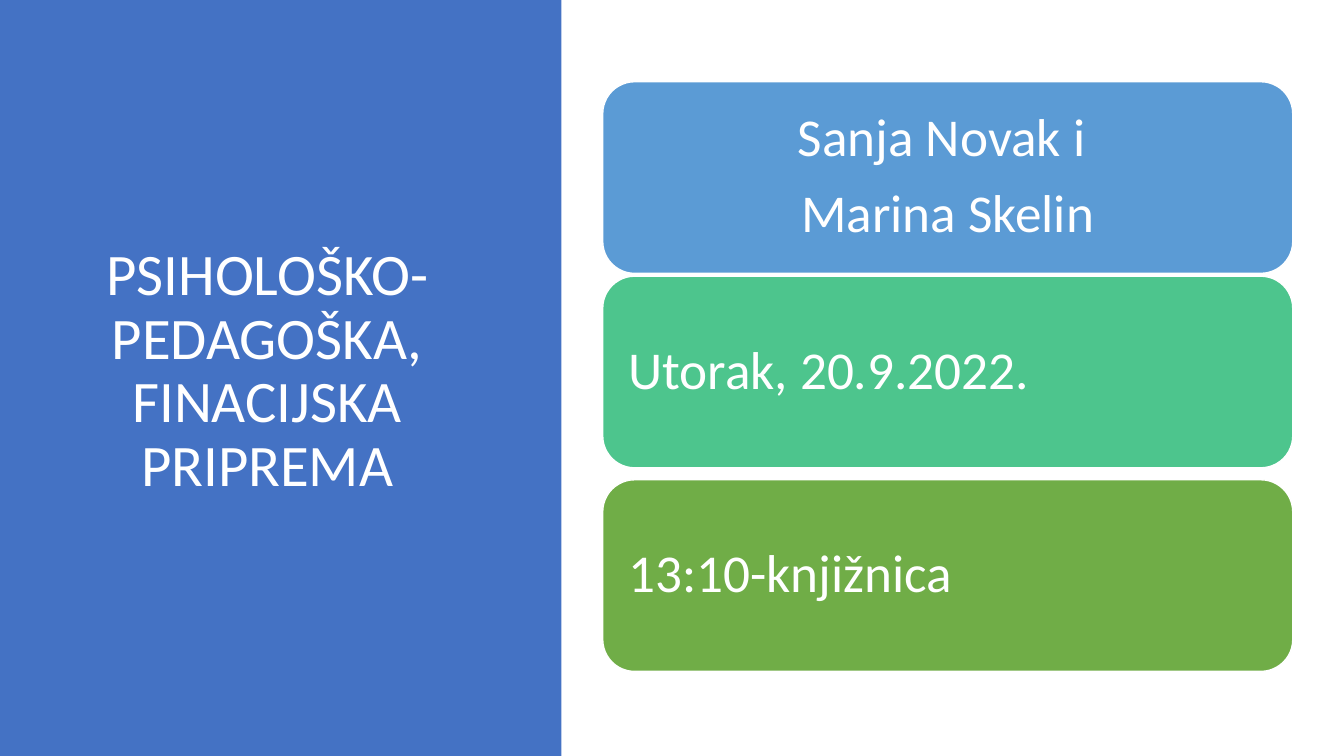
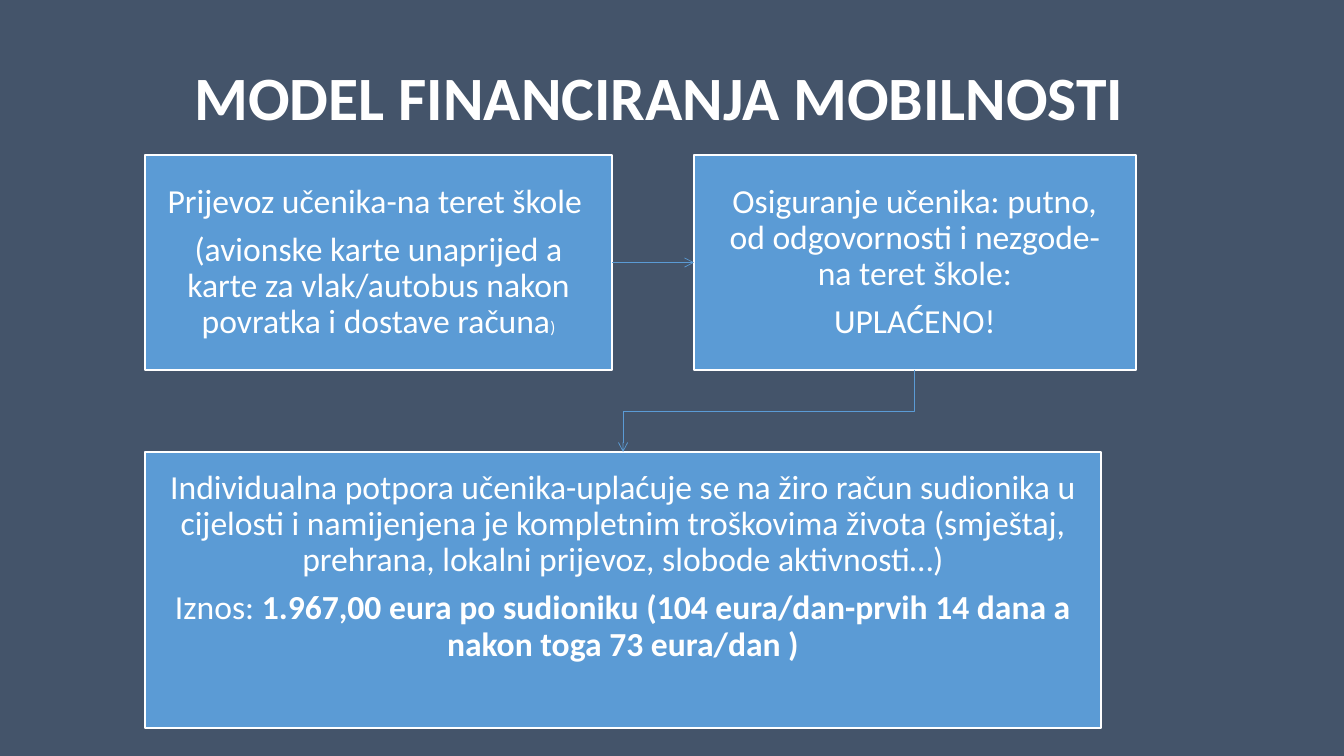
from dataclasses import dataclass

from lxml import etree
from pptx import Presentation
from pptx.dml.color import RGBColor
from pptx.enum.shapes import MSO_CONNECTOR as CONN, MSO_SHAPE as SHAPE
from pptx.enum.text import MSO_ANCHOR as ANCHOR, PP_ALIGN as ALIGN
from pptx.oxml.ns import qn
from pptx.util import Cm, Pt


@dataclass(frozen=True)
class Theme:
    font: str = "Calibri"
    white: str = "FFFFFF"
    slate: str = "44546A"
    panel: str = "4472C4"
    blue: str = "5B9BD5"
    teal: str = "4DC58D"
    green: str = "70AD47"
    cover: int = 42
    title: int = 44
    card: int = 38
    body: int = 24
    small: int = 12
    spacing: float = 0.9
    after: float = 0.35  # share of the type size


T = Theme()
WIDTH, HEIGHT = 33.87, 19.05

# Content: a paragraph is a list of (text, run format)
COVER_TITLE = [[("PSIHOLOŠKO-PEDAGOŠKA, FINACIJSKA PRIPREMA", {})]]
CARDS = [  # top, fill, alignment, paragraphs
    (2.06, T.blue, ALIGN.CENTER, [[("Sanja Novak i ", {})], [("Marina Skelin", {})]]),
    (6.96, T.teal, ALIGN.LEFT, [[("Utorak, 20.9.2022.", {})]]),
    (12.09, T.green, ALIGN.LEFT, [[("13:10-knjižnica", {})]]),
]
MODEL_TITLE = [[("MODEL FINANCIRANJA MOBILNOSTI", {"bold": True})]]
TRANSPORT = [
    [("Prijevoz učenika-na teret škole ", {})],
    [("(avionske karte unaprijed a karte za vlak/autobus nakon povratka "
      "i dostave računa", {}), (")", {"size": T.small})],
]
INSURANCE = [
    [("Osiguranje učenika: putno, od odgovornosti i nezgode- na teret škole:", {})],
    [("UPLAĆENO!", {})],
]
SUPPORT = [
    [("Individualna potpora učenika-uplaćuje se na žiro račun sudionika u cijelosti "
      "i namijenjena je kompletnim troškovima života (smještaj, prehrana, "
      "lokalni prijevoz, slobode aktivnosti…)", {})],
    [("Iznos: ", {}),
     ("1.967,00 eura po sudioniku (104 eura/dan-prvih 14 dana a nakon toga "
      "73 eura/dan )", {"bold": True})],
]


def rgb(color):
    return RGBColor.from_string(color)


def write(sp, paragraphs, size, align=ALIGN.CENTER, anchor=ANCHOR.MIDDLE,
          after=T.after, inset=(0.25, 0.13)):
    tf = sp.text_frame
    tf.word_wrap = True
    tf.vertical_anchor = anchor
    tf.margin_left = tf.margin_right = Cm(inset[0])
    tf.margin_top = tf.margin_bottom = Cm(inset[1])
    for i, runs in enumerate(paragraphs):
        p = tf.add_paragraph() if i else tf.paragraphs[0]
        p.alignment, p.line_spacing = align, T.spacing
        p.space_after = Pt(round(size * after, 1))
        for text, fmt in runs:
            r = p.add_run()
            r.text = text
            r.font.name, r.font.color.rgb = T.font, rgb(T.white)
            r.font.size = Pt(fmt.get("size", size))
            r.font.bold = fmt.get("bold", False)


def add_title(s, box, paragraphs, size, align):
    write(s.shapes.add_textbox(*map(Cm, box)), paragraphs, size, align, after=0)


def add_box(s, kind, box, fill, line_width=0):
    sp = s.shapes.add_shape(kind, *map(Cm, box))
    sp.shadow.inherit = False
    sp.fill.solid()
    sp.fill.fore_color.rgb = rgb(fill)
    if line_width:
        sp.line.color.rgb, sp.line.width = rgb(T.white), Pt(line_width)
    else:
        sp.line.fill.background()
    return sp


def add_arrow(s, kind, start, start_side, end, end_side):
    c = s.shapes.add_connector(kind, 0, 0, 0, 0)
    c.begin_connect(start, start_side)
    c.end_connect(end, end_side)
    c.line.color.rgb, c.line.width = rgb(T.blue), Pt(0.5)
    etree.SubElement(c.line._get_or_add_ln(), qn("a:tailEnd"), type="arrow")
    etree.SubElement(c._element.spPr, qn("a:effectLst"))
    return c


def turn_down_left(c):
    """Turn an elbow a quarter so that it leaves downwards and ends to the left."""
    w, h = c.width, c.height
    c.left, c.top = c.left + (w - h) // 2, c.top + (h - w) // 2
    c.width, c.height = h, w
    xfrm = c._element.spPr.find(qn("a:xfrm"))
    xfrm.attrib.pop("flipH", None)
    xfrm.set("rot", "5400000")


def new_slide(prs, background):
    s = prs.slides.add_slide(prs.slide_layouts[6])
    s.background.fill.solid()
    s.background.fill.fore_color.rgb = rgb(background)
    return s


def cover_slide(prs):
    s = new_slide(prs, T.white)
    add_box(s, SHAPE.RECTANGLE, (0, 0, 14.15, HEIGHT), T.panel)
    add_title(s, (1.45, 1.73, 10.57, 15.29), COVER_TITLE, T.cover, ALIGN.CENTER)
    for top, fill, align, paragraphs in CARDS:
        card = add_box(s, SHAPE.ROUNDED_RECTANGLE, (15.19, top, 17.39, 4.83), fill, 1)
        write(card, paragraphs, T.card, align, inset=(0.41, 0.41))


def model_slide(prs):
    s = new_slide(prs, T.slate)
    add_title(s, (4.65, 0.69, 29.21, 3.68), MODEL_TITLE, T.title, ALIGN.LEFT)

    # Two boxes in a row, the third one below
    left, top, height, gap = 3.66, 3.91, 5.41, 2.07
    first_width = 11.76
    steps = [
        ((left, top, first_width, height), TRANSPORT, ANCHOR.MIDDLE),
        ((left + first_width + gap, top, 11.13, height), INSURANCE, ANCHOR.MIDDLE),
        ((left, top + height + gap, 24.08, 6.96), SUPPORT, ANCHOR.TOP),
    ]
    boxes = []
    for box, paragraphs, anchor in steps:
        sp = add_box(s, SHAPE.RECTANGLE, box, T.blue, 1.5)
        write(sp, paragraphs, T.body, anchor=anchor, inset=(0.43, 0.46))
        boxes.append(sp)

    # Arrows between the steps
    transport, insurance, support = boxes
    add_arrow(s, CONN.STRAIGHT, transport, 3, insurance, 1)
    turn_down_left(add_arrow(s, CONN.ELBOW, insurance, 2, support, 0))


def main():
    prs = Presentation()
    prs.slide_width, prs.slide_height = Cm(WIDTH), Cm(HEIGHT)
    cover_slide(prs)
    model_slide(prs)
    prs.save("out.pptx")


if __name__ == "__main__":
    main()
